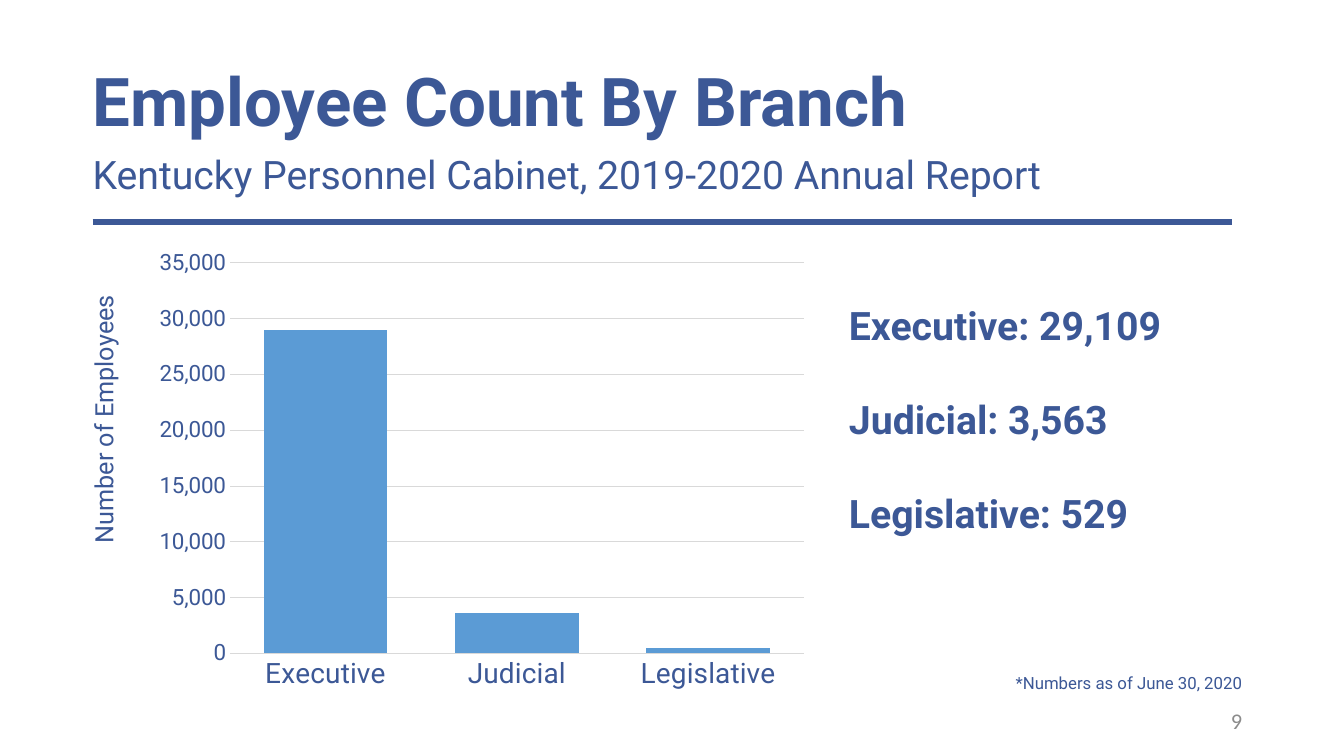
from dataclasses import dataclass

from lxml import etree
from pptx import Presentation
from pptx.chart.data import CategoryChartData
from pptx.dml.color import RGBColor
from pptx.enum.chart import XL_CHART_TYPE, XL_TICK_MARK
from pptx.enum.shapes import MSO_CONNECTOR
from pptx.enum.text import MSO_ANCHOR, MSO_AUTO_SIZE, PP_ALIGN
from pptx.oxml.ns import qn
from pptx.util import Pt

PX = 9144
COLUMN = XL_CHART_TYPE.COLUMN_STACKED
NO_TICK = XL_TICK_MARK.NONE
STRAIGHT = MSO_CONNECTOR.STRAIGHT
TOP, MIDDLE = MSO_ANCHOR.TOP, MSO_ANCHOR.MIDDLE
NO_FIT = MSO_AUTO_SIZE.NONE
LEFT, RIGHT = PP_ALIGN.LEFT, PP_ALIGN.RIGHT


@dataclass(frozen=True)
class Theme:
    navy: RGBColor = RGBColor(0x3C, 0x58, 0x96)
    blue: RGBColor = RGBColor(0x5B, 0x9B, 0xD5)
    gray: RGBColor = RGBColor(0x8C, 0x8C, 0x8C)
    pale: RGBColor = RGBColor(0xD9, 0xD9, 0xD9)
    font: str = "Roboto"
    plain: str = "Calibri"
    title: int = 48
    body: int = 28
    label: int = 20
    axis: int = 18
    small: int = 16
    note: int = 12


THEME = Theme()


def scale(*sizes):
    return [size * PX for size in sizes]


def style(font, size, color=THEME.navy, face=THEME.font, bold=False):
    font.size = Pt(size)
    font.name = face
    font.bold = bold
    font.color.rgb = color


def write(shape, lines, size, align=LEFT, anchor=TOP, gap=0, lead=1.0, **look):
    frame = shape.text_frame
    frame.word_wrap = True
    frame.auto_size = NO_FIT
    frame.vertical_anchor = anchor
    for index, line in enumerate(lines):
        para = frame.paragraphs[0] if index == 0 else frame.add_paragraph()
        props = para._p.get_or_add_pPr()
        props.set("marL", "0")
        props.set("indent", "0")
        etree.SubElement(props, qn("a:buNone"))
        para.alignment = align
        para.line_spacing = lead
        para.space_before = Pt(gap if index else 0)
        run = para.add_run()
        run.text = line
        style(run.font, size, **look)


def place(shape, *box):
    shape.left, shape.top, shape.width, shape.height = scale(*box)
    return shape


def add_text(slide, box, text, size, **look):
    write(slide.shapes.add_textbox(*scale(*box)), [text], size, **look)


def add_rule(slide, ends):
    rule = slide.shapes.add_connector(STRAIGHT, *scale(*ends))
    rule.line.color.rgb = THEME.navy
    rule.line.width = Pt(4.5)
    etree.SubElement(rule._element.spPr, qn("a:effectLst"))


def set_layout(parent, index, **values):
    old = parent.find(qn("c:layout"))
    if old is not None:
        parent.remove(old)
    layout = etree.Element(qn("c:layout"))
    manual = etree.SubElement(layout, qn("c:manualLayout"))
    for tag, value in values.items():
        etree.SubElement(manual, qn(f"c:{tag}")).set("val", str(value))
    parent.insert(index, layout)


def hairline(line):
    line.color.rgb = THEME.pale
    line.width = Pt(0.75)


def style_axes(chart):
    names, counts = chart.category_axis, chart.value_axis
    for axis, size in ((names, THEME.label), (counts, THEME.small)):
        axis.major_tick_mark = axis.minor_tick_mark = NO_TICK
        style(axis.tick_labels.font, size)
    hairline(names.format.line)
    hairline(counts.major_gridlines.format.line)
    counts.format.line.fill.background()
    counts.minimum_scale, counts.maximum_scale = 0, 35000
    counts.major_unit = 5000
    counts.tick_labels.number_format = "#,##0"
    counts.tick_labels.number_format_is_linked = False
    title = counts.axis_title
    run = title.text_frame.paragraphs[0].add_run()
    run.text = "Number of Employees"
    style(run.font, THEME.axis)
    body = title._element.find(f".//{qn('a:bodyPr')}")
    body.set("rot", "-5400000")
    body.set("vert", "horz")
    set_layout(title._element, 1, xMode="edge", yMode="edge", x=0, y=0.11)


def add_chart(slide, box):
    data = CategoryChartData()
    data.categories = ["Executive", "Judicial", "Legislative"]
    data.add_series("Series 1", [29000, 3600, 500])
    chart = slide.shapes.add_chart(COLUMN, *scale(*box), data).chart
    chart.has_legend = chart.has_title = False
    chart.font.name = THEME.plain
    plot = chart.plots[0]
    plot.gap_width, plot.overlap = 55, 100
    plot.vary_by_categories = False
    fill = plot.series[0].format.fill
    fill.solid()
    fill.fore_color.rgb = THEME.blue
    style_axes(chart)
    area = chart._chartSpace.find(f".//{qn('c:plotArea')}")
    set_layout(area, 0, layoutTarget="inner", xMode="edge", yMode="edge",
               x=0.2, y=0.05, w=0.78, h=0.85)


def main():
    deck = Presentation()
    deck.slide_width, deck.slide_height = scale(1333, 750)
    slide = deck.slides.add_slide(deck.slide_layouts[1])
    title, body = slide.placeholders
    add_rule(slide, (92, 220, 1222, 220))
    write(place(title, 82, 42, 942, 124), ["Employee Count By Branch"],
          THEME.title, anchor=MIDDLE, lead=0.9, bold=True)
    add_text(slide, (82, 144, 1068, 57),
             "Kentucky Personnel Cabinet, 2019-2020 Annual Report", THEME.body)
    add_chart(slide, (82, 238, 730, 456))
    counts = ["Executive: 29,109", "Judicial: 3,563", "Legislative: 529"]
    write(place(body, 832, 294, 392, 246), counts, THEME.body, gap=33.5, bold=True)
    add_text(slide, (778, 662, 464, 30), "*Numbers as of June 30, 2020",
             THEME.note, align=RIGHT)
    add_text(slide, (942, 695, 300, 40), "9", THEME.small, align=RIGHT,
             anchor=MIDDLE, color=THEME.gray, face=THEME.plain)
    deck.save("out.pptx")


if __name__ == "__main__":
    main()
